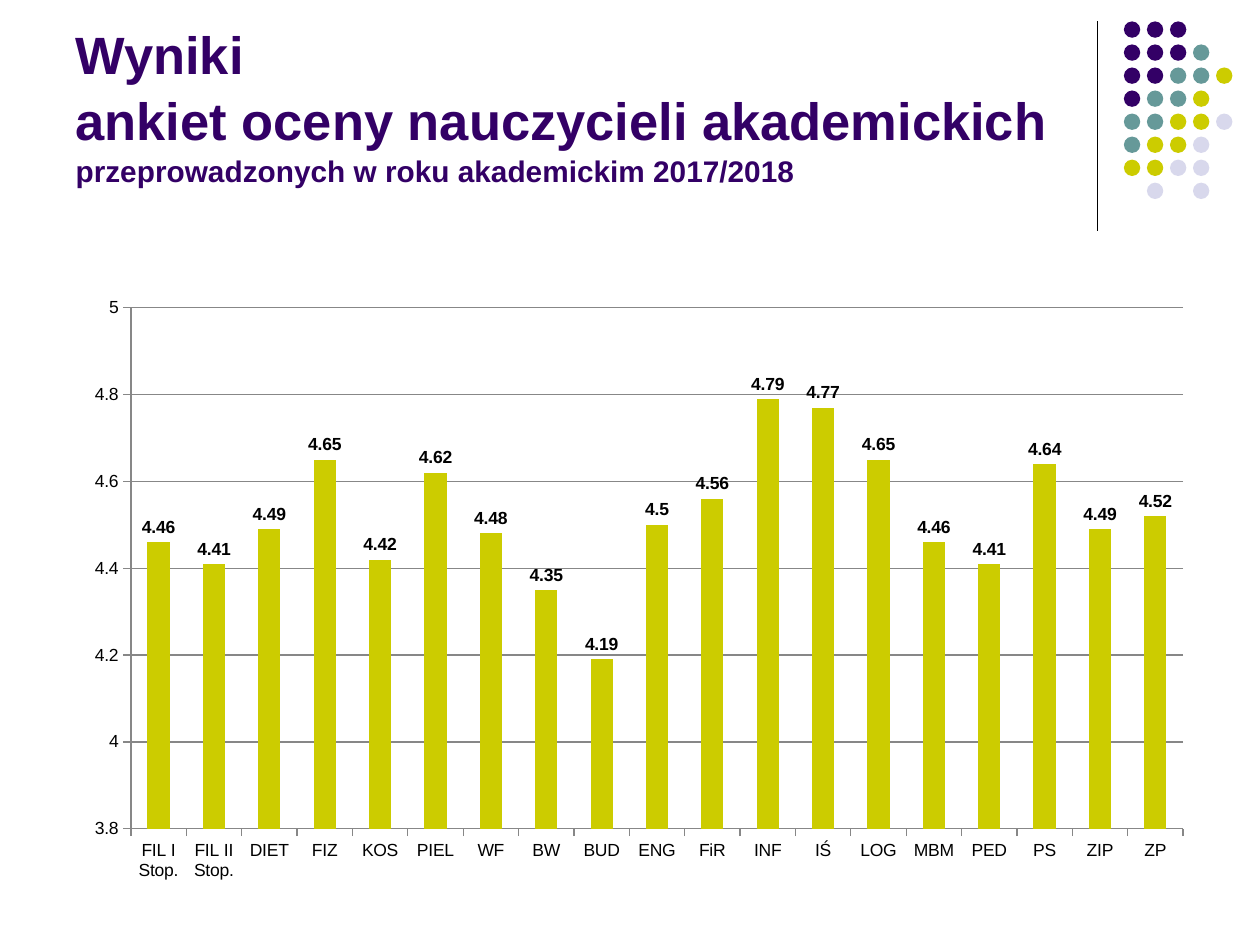
from pptx import Presentation
from pptx.chart.data import CategoryChartData
from pptx.dml.color import RGBColor
from pptx.enum.chart import XL_CHART_TYPE, XL_LABEL_POSITION, XL_TICK_MARK
from pptx.enum.shapes import MSO_CONNECTOR, MSO_SHAPE
from pptx.enum.text import MSO_ANCHOR, MSO_AUTO_SIZE, PP_ALIGN
from pptx.oxml import parse_xml
from pptx.oxml.ns import nsdecls
from pptx.util import Inches, Pt


class Theme:
    font = "Arial"
    purple = RGBColor.from_string("330066")
    teal = RGBColor.from_string("669999")
    lime = RGBColor.from_string("CCCC00")
    lilac = RGBColor.from_string("D8D8EC")
    black = RGBColor.from_string("000000")
    grey = RGBColor.from_string("878787")
    heading = Pt(30)
    subheading = Pt(17)
    chart_text = Pt(10)
    hairline = Pt(0.75)


TITLE_LINES = [
    ("Wyniki", Theme.heading),
    ("ankiet oceny nauczycieli akademickich", Theme.heading),
    ("przeprowadzonych w roku akademickim 2017/2018", Theme.subheading),
]
SCORES = {
    "FIL I Stop.": 4.46, "FIL II Stop.": 4.41, "DIET": 4.49, "FIZ": 4.65,
    "KOS": 4.42, "PIEL": 4.62, "WF": 4.48, "BW": 4.35, "BUD": 4.19,
    "ENG": 4.5, "FiR": 4.56, "INF": 4.79, "IŚ": 4.77, "LOG": 4.65,
    "MBM": 4.46, "PED": 4.41, "PS": 4.64, "ZIP": 4.49, "ZP": 4.52,
}
# One letter per dot, a point for an empty place
DOT_ROWS = ["PPP..", "PPPT.", "PPTTL", "PTTL.", "TTLLV", "TLLV.", "LLVV.", ".V.V."]
DOT_COLORS = {"P": Theme.purple, "T": Theme.teal, "L": Theme.lime, "V": Theme.lilac}
DOT_LEFT, DOT_TOP, DOT_SIZE = 8.92, 0.17, 0.13
DOT_PITCH = 1.28 / 7

deck = Presentation()
deck.slide_width, deck.slide_height = Inches(10), Inches(7.5)
page = deck.slides.add_slide(deck.slide_layouts[5])

# Vertical rule
rule = page.shapes.add_connector(
    MSO_CONNECTOR.STRAIGHT, Inches(8.71), Inches(0.17), Inches(8.71), Inches(1.83))
rule.line.color.rgb = Theme.black
rule.line.width = Theme.hairline
rule._element.spPr.append(parse_xml(f"<a:effectLst {nsdecls('a')}/>"))

# Dot ornament
dots = page.shapes.add_group_shape()
for row, letters in enumerate(DOT_ROWS):
    for column, letter in enumerate(letters):
        if letter == ".":
            continue
        dot = dots.shapes.add_shape(
            MSO_SHAPE.OVAL,
            Inches(DOT_LEFT + column * DOT_PITCH), Inches(DOT_TOP + row * DOT_PITCH),
            Inches(DOT_SIZE), Inches(DOT_SIZE))
        dot.shadow.inherit = False
        dot.fill.solid()
        dot.fill.fore_color.rgb = DOT_COLORS[letter]
        dot.line.fill.background()

# Title
title = page.shapes.title
title.left, title.top = Inches(0.5), Inches(0.13)
title.width, title.height = Inches(8.25), Inches(1.42)
frame = title.text_frame
frame.word_wrap = True
frame.auto_size = MSO_AUTO_SIZE.NONE
frame.vertical_anchor = MSO_ANCHOR.BOTTOM
para = frame.paragraphs[0]
para.alignment = PP_ALIGN.LEFT
para.line_spacing = 1.05
for index, (text, size) in enumerate(TITLE_LINES):
    if index:
        para.add_line_break()
    span = para.add_run()
    span.text = text
    span.font.name = Theme.font
    span.font.size = size
    span.font.bold = True
    span.font.color.rgb = Theme.purple

# Chart of survey scores
data = CategoryChartData()
data.categories = list(SCORES)
data.add_series("Series 1", list(SCORES.values()))
chart = page.shapes.add_chart(
    XL_CHART_TYPE.COLUMN_CLUSTERED,
    Inches(0.59), Inches(2.25), Inches(8.98), Inches(4.81), data).chart
chart.has_legend = False
chart.has_title = False
chart.font.name = Theme.font
chart.font.size = Theme.chart_text
chart.font.color.rgb = Theme.black

plot = chart.plots[0]
plot.gap_width = 150
plot.vary_by_categories = False
bars = plot.series[0]
bars.format.fill.solid()
bars.format.fill.fore_color.rgb = Theme.lime
plot.has_data_labels = True
labels = plot.data_labels
labels.show_value = True
labels.position = XL_LABEL_POSITION.OUTSIDE_END
labels.font.name = Theme.font
labels.font.size = Theme.chart_text
labels.font.bold = True
labels.font.color.rgb = Theme.black

# Axes and grid
scale = chart.value_axis
scale.minimum_scale, scale.maximum_scale, scale.major_unit = 3.8, 5, 0.2
scale.has_major_gridlines = True
for axis in (scale, chart.category_axis):
    axis.major_tick_mark = XL_TICK_MARK.OUTSIDE
    axis.minor_tick_mark = XL_TICK_MARK.NONE
for line in (scale.format.line, chart.category_axis.format.line,
             scale.major_gridlines.format.line):
    line.color.rgb = Theme.grey
    line.width = Theme.hairline

# Fixed inner plot area, as fractions of the chart
area = chart._chartSpace.chart.plotArea
for old in area.findall("{*}layout"):
    area.remove(old)
area.insert(0, parse_xml(
    f"<c:layout {nsdecls('c')}><c:manualLayout><c:layoutTarget val='inner'/>"
    "<c:xMode val='edge'/><c:yMode val='edge'/><c:x val='0.05'/><c:y val='0.04'/>"
    "<c:w val='0.93'/><c:h val='0.86'/></c:manualLayout></c:layout>"))

deck.save("out.pptx")
